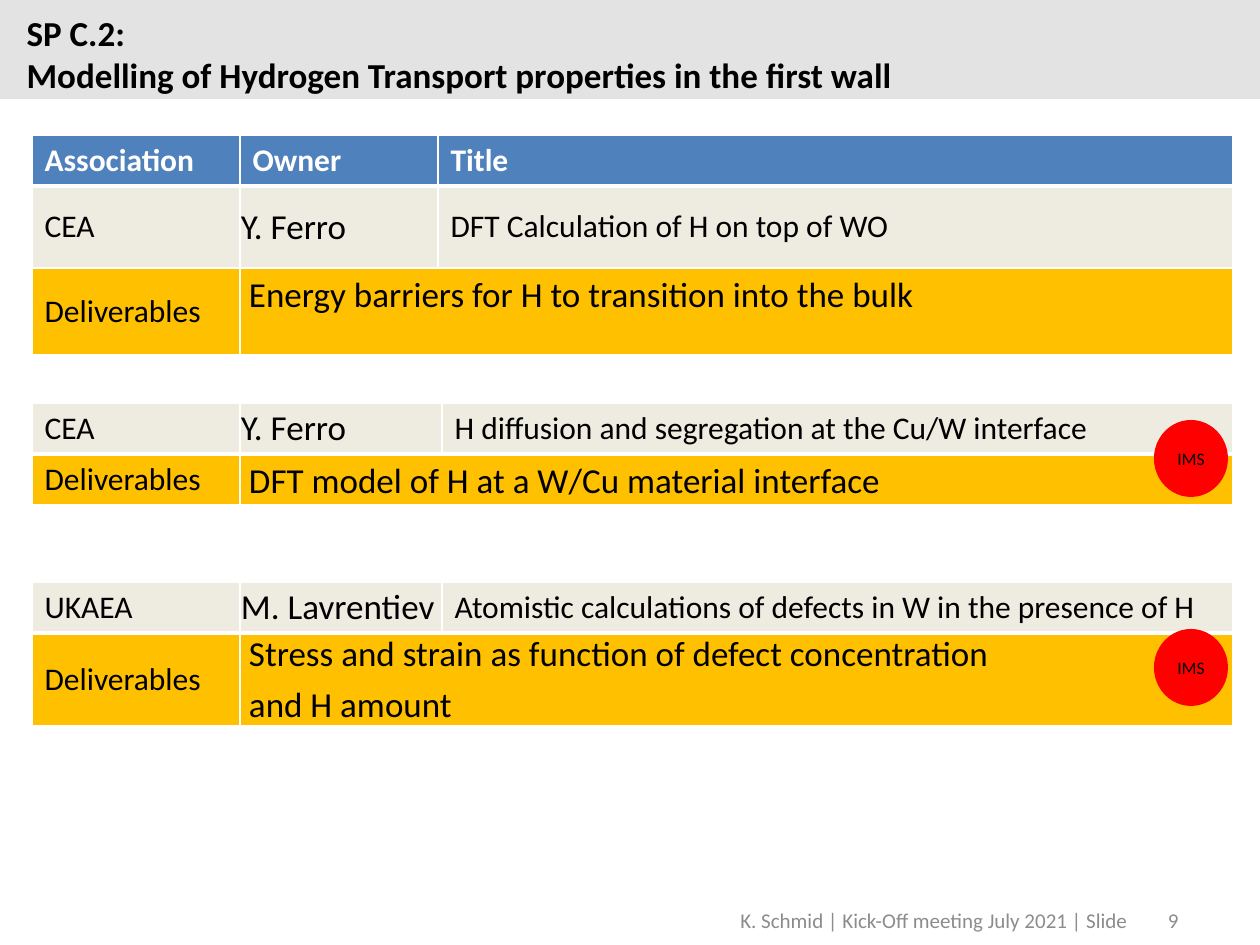
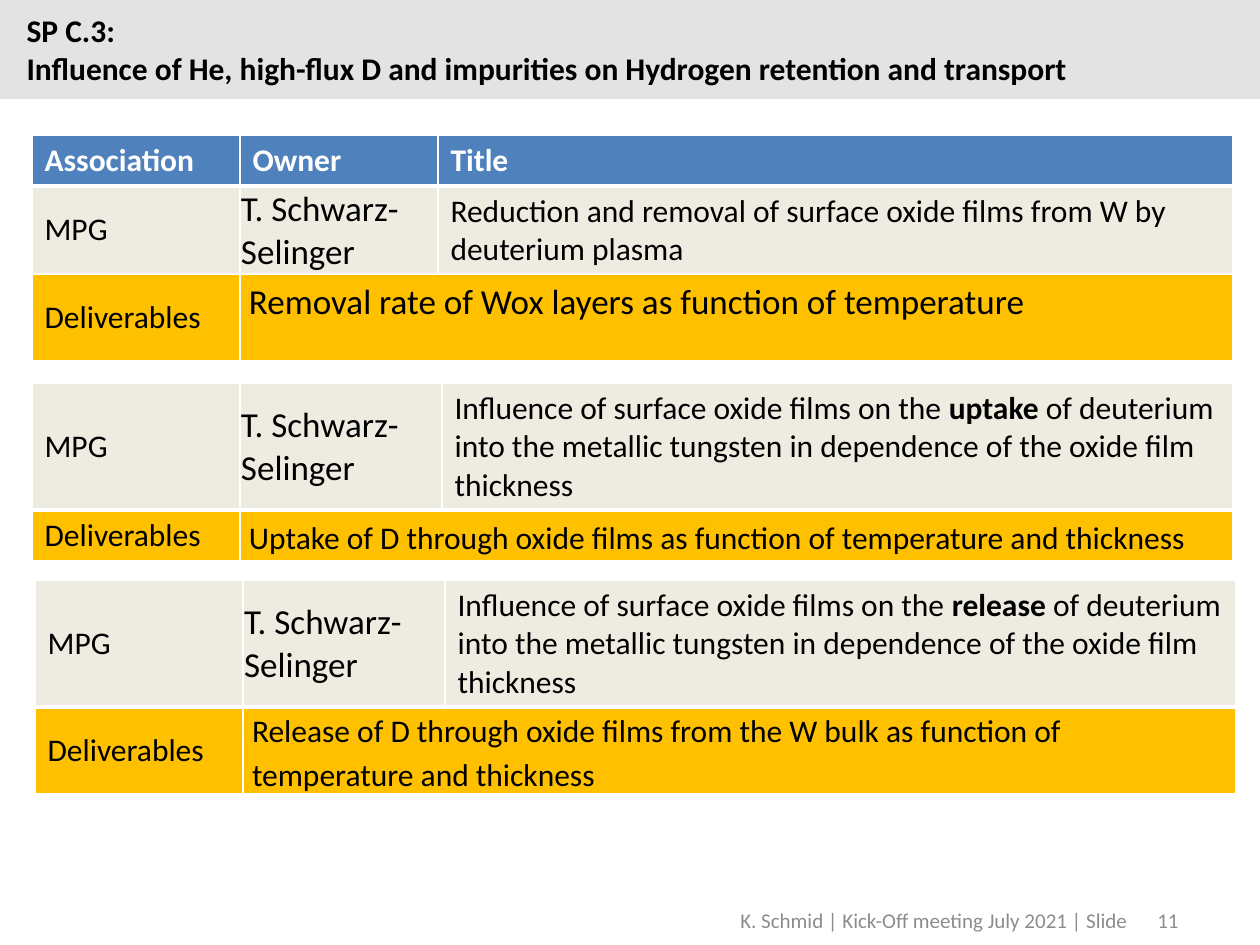
from lxml import etree
from pptx import Presentation
from pptx import util as u
from pptx.dml import color
from pptx.enum import shapes, text
from pptx.oxml import ns

SCALE = 914400 / 126
FONT = "Calibri"
WHITE, BLACK, GREY = "FFFFFF", "000000", "8C8C8C"
BAND, HEADER, TASK, RESULT, MARK = "E3E3E3", "4F81BD", "EEECE1", "FFC000", "FF0000"
HEADINGS = ("Association", "Owner", "Title")
HEADER_HEIGHT = 51
LEFT, FIRST_TOP = 32, 135
FIRST_COLUMNS = (208, 198, 795)
COLUMNS = (208, 202, 791)
LINE_GAP = 2.4


def px(length):
    return u.Emu(round(length * SCALE))


def rgb(code):
    return color.RGBColor.from_string(code)


def place(shape, left, top, width, height):
    shape.left, shape.top = px(left), px(top)
    shape.width, shape.height = px(width), px(height)


def set_insets(target, left, top, right, bottom):
    target.margin_left, target.margin_top = px(left), px(top)
    target.margin_right, target.margin_bottom = px(right), px(bottom)


def add_span(para, words, size, ink=BLACK, bold=False):
    span = para.add_run()
    span.text = words
    span.font.name = FONT
    span.font.size = u.Pt(size)
    span.font.bold = bold
    span.font.color.rgb = rgb(ink)


def add_shape(page, kind, fill, left, top, width, height):
    shape = page.shapes.add_shape(kind, px(left), px(top), px(width), px(height))
    shape.shadow.inherit = False
    shape.fill.solid()
    shape.fill.fore_color.rgb = rgb(fill)
    shape.line.fill.background()
    return shape


def add_layout_band(page):
    band = add_shape(page, shapes.MSO_SHAPE.RECTANGLE, BAND, 0, 0, 1260, 99)
    page.slide_layout.shapes._spTree.insert(2, band._element)


def set_title(page, lines, size, width, height):
    title = page.shapes.title
    place(title, 14, 5, width, height)
    frame = title.text_frame
    frame.word_wrap = True
    frame.auto_size = text.MSO_AUTO_SIZE.NONE
    frame.vertical_anchor = text.MSO_ANCHOR.TOP
    for index, line in enumerate(lines):
        para = frame.add_paragraph() if index else frame.paragraphs[0]
        para.alignment = text.PP_ALIGN.LEFT
        add_span(para, line, size, bold=True)


def add_footer_box(page, words, left, width, alignment):
    box = page.shapes.add_textbox(px(left), px(895), px(width), px(50))
    frame = box.text_frame
    frame.word_wrap = True
    frame.vertical_anchor = text.MSO_ANCHOR.MIDDLE
    para = frame.paragraphs[0]
    para.alignment = alignment
    add_span(para, words, 12, GREY)


def add_footer(page, number):
    add_footer_box(page, "K. Schmid | Kick-Off meeting July 2021 | Slide", 669, 530,
                   text.PP_ALIGN.CENTER)
    add_footer_box(page, number, 907, 284, text.PP_ALIGN.RIGHT)


def add_mark(page, top):
    mark = add_shape(page, shapes.MSO_SHAPE.OVAL, MARK, 1154, top, 74, 77)
    frame = mark.text_frame
    set_insets(frame, 0, 0, 0, 0)
    frame.vertical_anchor = text.MSO_ANCHOR.MIDDLE
    para = frame.paragraphs[0]
    para.alignment = text.PP_ALIGN.CENTER
    add_span(para, "IMS", 10)


def style_cell(cell, fill, bottom):
    cell.fill.solid()
    cell.fill.fore_color.rgb = rgb(fill)
    properties = cell._tc.get_or_add_tcPr()
    widths = (("lnL", 1), ("lnR", 1), ("lnT", 1), ("lnB", bottom))
    for index, (side, width) in enumerate(widths):
        line = etree.Element(ns.qn("a:" + side), w=str(u.Pt(width)))
        paint = etree.SubElement(line, ns.qn("a:solidFill"))
        etree.SubElement(paint, ns.qn("a:srgbClr"), val=WHITE)
        properties.insert(index, line)


def fill_header(table):
    for cell, heading in zip(table.rows[0].cells, HEADINGS):
        style_cell(cell, HEADER, 3)
        add_span(cell.text_frame.paragraphs[0], heading, 18, WHITE, True)


def fill_task(table, row, association, owner, title, bottom):
    contents = ([association], 18), ([owner], 20), (title, 18)
    for cell, (parts, size) in zip(table.rows[row].cells, contents):
        style_cell(cell, TASK, bottom)
        cell.vertical_anchor = text.MSO_ANCHOR.MIDDLE
        para = cell.text_frame.paragraphs[0]
        for index, part in enumerate(parts):
            add_span(para, part, size, bold=index % 2 == 1)
    set_insets(table.cell(row, 1), 1, 1, 1, 0)


def fill_deliverables(table, row, lines, size, spacing, inset):
    for cell in table.rows[row].cells:
        style_cell(cell, RESULT, 1)
    label, detail = table.cell(row, 0), table.cell(row, 1)
    label.vertical_anchor = text.MSO_ANCHOR.MIDDLE
    add_span(label.text_frame.paragraphs[0], "Deliverables", 18)
    detail.merge(table.cell(row, 2))
    set_insets(detail, 9, inset, 9, 0)
    frame = detail.text_frame
    for index, line in enumerate(lines):
        para = frame.add_paragraph() if index else frame.paragraphs[0]
        if index:
            para.space_before = u.Pt(LINE_GAP)
        para.space_after = u.Pt(LINE_GAP)
        para.line_spacing = spacing
        add_span(para, line, size)


def add_task_table(page, top, heights, association, owner, title, lines,
                   size=20, spacing=1.15, inset=0, left=LEFT, header=False):
    columns = FIRST_COLUMNS if header else COLUMNS
    if header:
        heights = (HEADER_HEIGHT, *heights)
    frame = page.shapes.add_table(len(heights), len(columns), px(left), px(top),
                                  px(sum(columns)), px(sum(heights)))
    table = frame.table
    for column, width in zip(table.columns, columns):
        column.width = px(width)
    for line, height in zip(table.rows, heights):
        line.height = px(height)
    if header:
        fill_header(table)
    row = len(heights) - 2
    fill_task(table, row, association, owner, title, 1 if header else 3)
    fill_deliverables(table, row + 1, lines, size, spacing, inset)


def add_page(deck, number, lines, size, width, height):
    page = deck.slides.add_slide(deck.slide_layouts[5])
    set_title(page, lines, size, width, height)
    add_footer(page, number)
    return page


def build_modelling(deck):
    page = add_page(deck, "9", (
        "SP C.2:", "Modelling of Hydrogen Transport properties in the first wall"),
        20, 1113, 97)
    add_layout_band(page)
    add_task_table(page, FIRST_TOP, (82, 87), "CEA", "Y. Ferro",
                   ["DFT Calculation of H on top of WO"],
                   ["Energy barriers for H to transition into the bulk"], header=True)
    add_task_table(page, 403, (51, 51), "CEA", "Y. Ferro",
                   ["H diffusion and segregation at the Cu/W interface"],
                   ["DFT model of H at a W/Cu material interface"])
    add_task_table(page, 582, (51, 92), "UKAEA", "M. Lavrentiev",
                   ["Atomistic calculations of defects in W in the presence of H"],
                   ["Stress and strain as function of defect concentration", "and H amount"],
                   spacing=1.0)
    for top in (420, 629):
        add_mark(page, top)


def build_influence(deck):
    page = add_page(deck, "11", (
        "SP C.3:",
        "Influence of He, high-flux D and impurities on Hydrogen retention and transport"),
        18, 1182, 89)
    group, owner = "MPG", "T. Schwarz-Selinger"

    def film_title(process):
        return ["Influence of surface oxide films on the ", process,
                " of deuterium into the metallic tungsten in dependence of the oxide film thickness"]

    add_task_table(page, FIRST_TOP, (88, 87), group, owner,
                   ["Reduction and removal of surface oxide films from W by deuterium plasma"],
                   ["Removal rate of Wox layers as function of temperature"], header=True)
    add_task_table(page, 383, (127, 50), group, owner, film_title("uptake"),
                   ["Uptake of D through oxide films as function of temperature and thickness"],
                   size=18, inset=4)
    add_task_table(page, 580, (127, 86), group, owner, film_title("release"),
                   ["Release of D through oxide films from the W bulk as function of "
                    "temperature and thickness"], size=18, left=35)


def main():
    deck = Presentation()
    deck.slide_width, deck.slide_height = px(1260), px(945)
    build_modelling(deck)
    build_influence(deck)
    deck.save("out.pptx")


if __name__ == "__main__":
    main()
